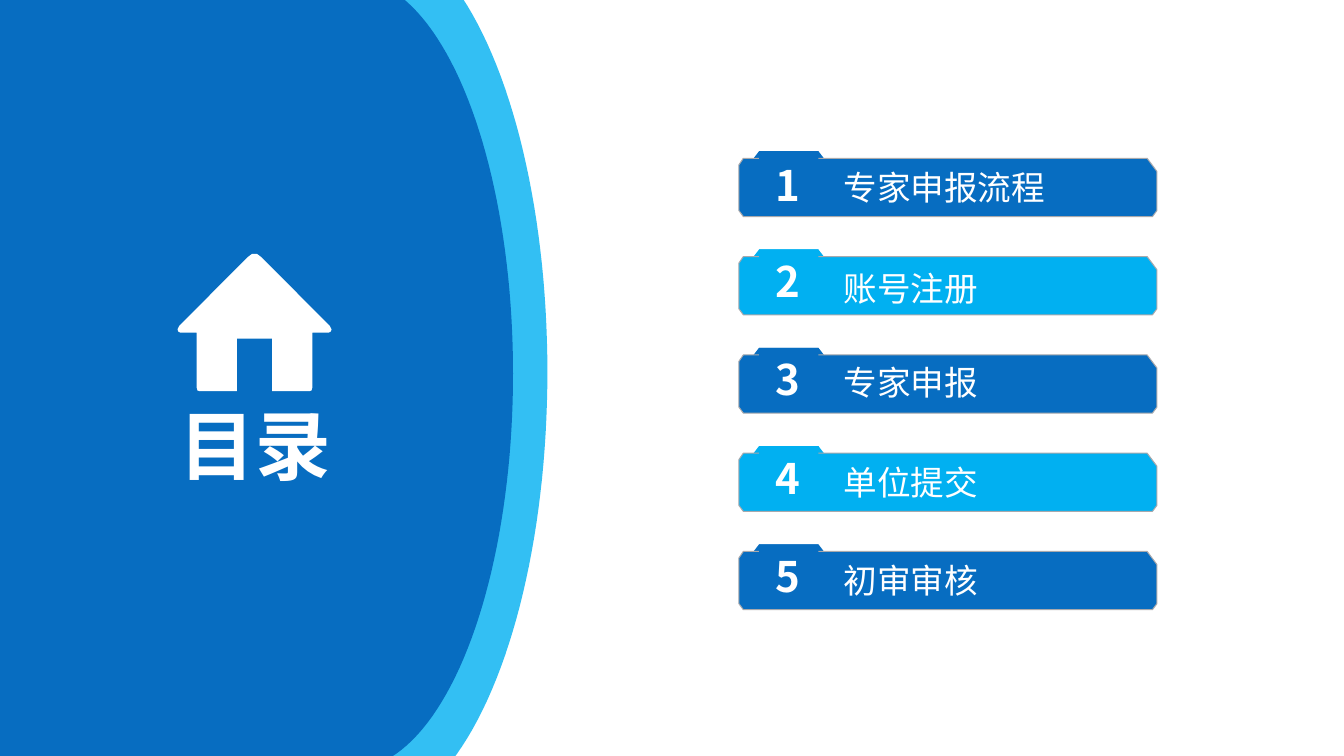
"""Build a contents slide with a curved side panel and five numbered folder cards."""
import math

from pptx import Presentation
from pptx.dml.color import RGBColor
from pptx.enum import shapes, text
from pptx.oxml import ns, xmlchemy
from pptx.util import Pt

BLUE = RGBColor(0x07, 0x6D, 0xC1)
SKY = RGBColor(0x01, 0xB0, 0xF1)
GREY = RGBColor(0xA8, 0xA9, 0xAD)
WHITE = RGBColor(0xFF, 0xFF, 0xFF)
FONT = "Noto Sans CJK SC"


def draw_outline(parent, points, color):
    corners = [(Pt(x), Pt(y)) for x, y in points]
    builder = parent.build_freeform(*corners[0], scale=1)
    builder.add_line_segments(corners[1:], close=True)
    shape = builder.convert_to_shape()
    shape.shadow.inherit = False
    shape.fill.solid()
    shape.fill.fore_color.rgb = color
    shape.line.fill.background()
    return shape


def write_text(box, wording, size, bold, wrap, inset_x, inset_y):
    frame = box.text_frame
    frame.text = wording
    frame.word_wrap = wrap
    frame.auto_size = text.MSO_AUTO_SIZE.SHAPE_TO_FIT_TEXT
    frame.vertical_anchor = text.MSO_ANCHOR.MIDDLE
    frame.margin_left = frame.margin_right = Pt(inset_x)
    frame.margin_top = frame.margin_bottom = Pt(inset_y)
    span = frame.paragraphs[0].runs[0]
    span.font.size = Pt(size)
    span.font.bold = bold
    span.font.color.rgb = WHITE
    span.font.name = FONT
    east_asian = xmlchemy.OxmlElement("a:ea")
    east_asian.set("typeface", FONT)
    span.font._element.append(east_asian)


deck = Presentation()
deck.slide_width, deck.slide_height = Pt(960), Pt(540)
page = deck.slides.add_slide(deck.slide_layouts[5])

panels = [
    (-73.4, -49.7, 261.4, 391, 581, SKY),
    (-49, -15.8, 251.2, 366.5, 549.4, BLUE),
]
panel_shapes = []
for left, top, arc_left, right, bottom, color in panels:
    middle, radius = (top + bottom) / 2, (bottom - top) / 2
    angles = [math.radians(degree) for degree in range(-90, 91, 2)]
    arc = [(arc_left + (right - arc_left) * math.cos(angle),
            middle + radius * math.sin(angle)) for angle in angles]
    panel_shapes.append(draw_outline(page.shapes, [(left, top), *arc, (left, bottom)], color))
tint = panel_shapes[0].element.spPr.find(".//" + ns.qn("a:srgbClr"))
alpha = xmlchemy.OxmlElement("a:alpha")
alpha.set("val", "80000")
tint.append(alpha)

HOUSE_AXIS = 181.8
house_half = [
    (1.8, 181.4), (4.7, 183.6), (53.6, 232.6), (54.4, 234), (55, 235.4),
    (54.4, 236.9), (53, 237.6), (41.4, 237.6), (41.4, 276.5), (40.7, 279),
    (39.2, 279.4), (12.6, 279.4), (12.6, 241.9),
]
house_right = [(HOUSE_AXIS + x, y) for x, y in house_half]
house_left = [(HOUSE_AXIS - x, y) for x, y in reversed(house_half)]
draw_outline(page.shapes, house_right + house_left, WHITE)

title = page.shapes.title
title.left, title.top, title.width, title.height = Pt(119.5), Pt(280.8), Pt(126), Pt(72.7)
write_text(title, "目录", 54, True, True, 7.2, 3.6)
title.text_frame.paragraphs[0].alignment = text.PP_ALIGN.CENTER
title.element.getparent().append(title.element)

FIRST_TOP, PITCH = 108, 70.2
CARD_LEFT, CARD_RIGHT = 527.8, 826.4
TAB_LEFT, TAB_RIGHT = 542.2, 584.6
entries = [
    ("专家申报流程", 156.2, 8.6, 2.9),
    ("账号注册", 108, 10.4, 1.1),
    ("专家申报", 108, 7.2, 1.4),
    ("单位提交", 108, 8.3, 1.8),
    ("初审审核", 108, 7.9, 1.4),
]
for index, (label, label_width, label_drop, number_drop) in enumerate(entries):
    top = FIRST_TOP + PITCH * index
    color = SKY if index % 2 else BLUE
    card_top, card_bottom = top + 5.1, top + 46.7
    group = page.shapes.add_group_shape().shapes

    draw_outline(group, [(TAB_LEFT, top), (TAB_RIGHT, top),
                         (TAB_RIGHT + 5, top + 6.5), (TAB_LEFT - 5, top + 6.5)], color)
    card = draw_outline(group, [
        (CARD_LEFT + 3.2, card_top), (CARD_RIGHT - 7, card_top),
        (CARD_RIGHT, card_top + 9.4), (CARD_RIGHT, card_bottom - 4.3),
        (CARD_RIGHT - 3.2, card_bottom), (CARD_LEFT + 3.2, card_bottom),
        (CARD_LEFT, card_bottom - 4.3), (CARD_LEFT, card_top + 4.7),
    ], color)
    card.line.color.rgb = GREY
    card.line.width = Pt(0)

    tab = group.add_shape(shapes.MSO_SHAPE.RECTANGLE, Pt(TAB_LEFT), Pt(top),
                          Pt(TAB_RIGHT - TAB_LEFT), Pt(43.9))
    tab.shadow.inherit = False
    tab.fill.solid()
    tab.fill.fore_color.rgb = color
    tab.line.fill.background()

    label_box = group.add_textbox(Pt(597.6), Pt(top + label_drop), Pt(label_width), Pt(34.6))
    write_text(label_box, label, 24, False, False, 5, 2.9)
    number_box = group.add_textbox(Pt(548.6), Pt(top + number_drop), Pt(29.5), Pt(41.8))
    write_text(number_box, str(index + 1), 30, True, False, 5, 2.9)

deck.save("out.pptx")
